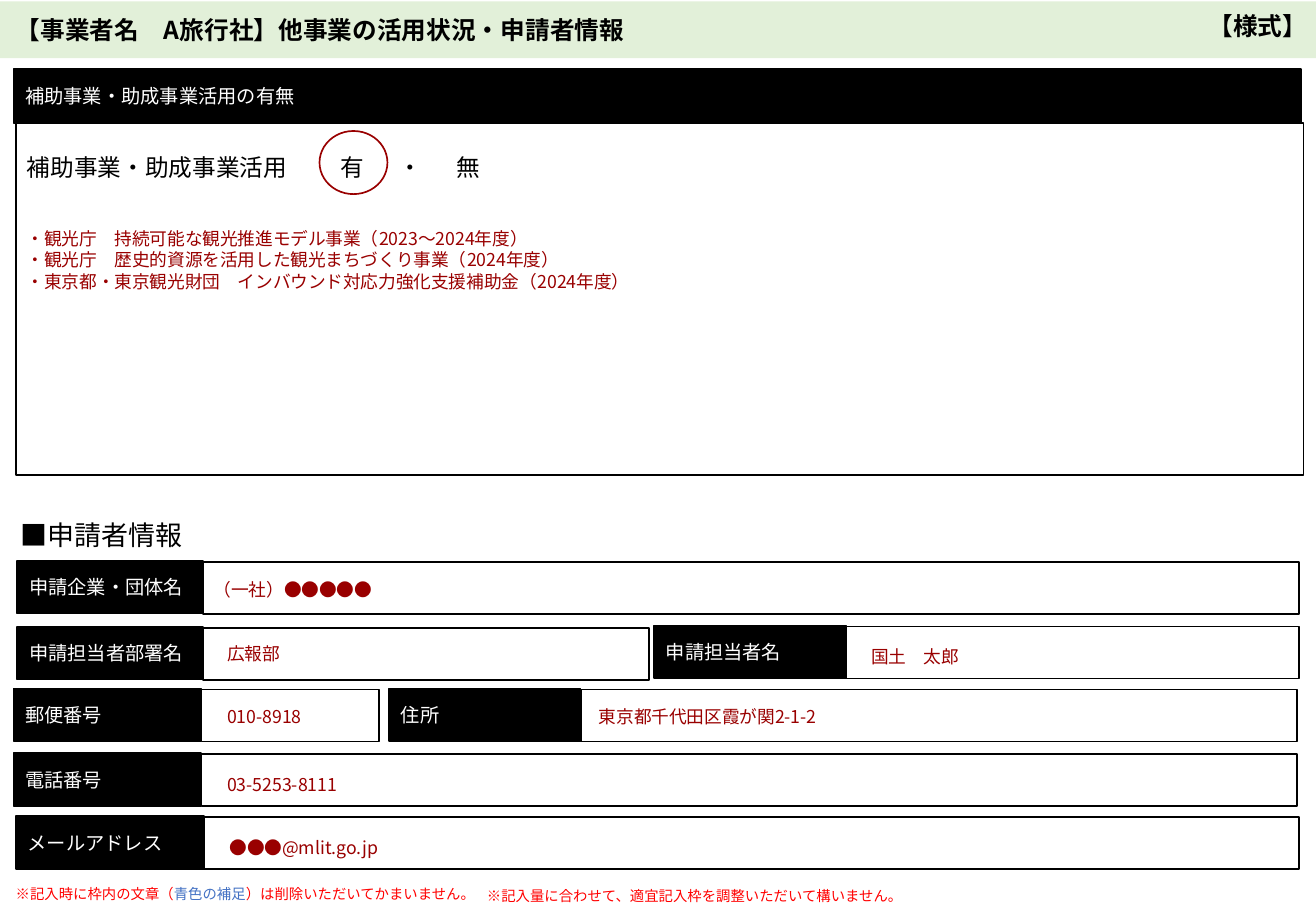
from lxml.etree import SubElement
from pptx import Presentation
from pptx.dml.color import RGBColor
from pptx.enum.lang import MSO_LANGUAGE_ID
from pptx.enum.shapes import MSO_SHAPE
from pptx.enum.text import MSO_ANCHOR, PP_ALIGN
from pptx.oxml.ns import qn
from pptx.util import Cm, Pt

FONT = "Noto Sans CJK JP"
COLORS = {
    "band": "E2F0D9", "black": "000000", "white": "FFFFFF",
    "answer": "990000", "warning": "FF0000", "example": "4472C4",
}

TITLE = "【事業者名　A旅行社】他事業の活用状況・申請者情報"
FORM_MARK = "【様式】"
USAGE_HEADING = "補助事業・助成事業活用の有無"
USAGE_CHOICES = ["補助事業・助成事業活用", "有", "・", "無"]
CHOICE_STOPS = [6.55, 7.77, 8.99]
SUBSIDIES = [
    "・観光庁　持続可能な観光推進モデル事業（2023～2024年度）",
    "・観光庁　歴史的資源を活用した観光まちづくり事業（2024年度）",
    "・東京都・東京観光財団　インバウンド対応力強化支援補助金（2024年度）",
]
APPLICANT_HEADING = "■申請者情報"
# label, left, top, label width, right edge, answer, answer left, answer top
FIELDS = [
    ("申請企業・団体名", 0.36, 11.73, 3.89, 27.15, "（一社）●●●●●", 4.27, 12.01),
    ("申請担当者部署名", 0.36, 13.11, 3.89, 13.57, "広報部", 4.55, 13.34),
    ("申請担当者名", 13.67, 13.08, 4.02, 27.15, "国土　太郎", 18.01, 13.41),
    ("郵便番号", 0.28, 14.4, 3.93, 7.93, "010-8918", 4.55, 14.66),
    ("住所", 8.13, 14.4, 4.01, 27.11, "東京都千代田区霞が関2-1-2", 12.32, 14.66),
    ("電話番号", 0.28, 15.75, 3.93, 27.11, "03-5253-8111", 4.55, 16.08),
    ("メールアドレス", 0.33, 17.07, 3.93, 27.15, "●●●@mlit.go.jp", 4.6, 17.4),
]
NOTES = [
    (0.08, 18.39, [("※記入時に枠内の文章（", "warning"), ("青色の補足", "example"),
                   ("）は削除いただいてかまいません。", "warning")]),
    (9.93, 18.42, [("※記入量に合わせて、適宜記入枠を調整いただいて構いません。", "warning")]),
]


def rgb(name):
    return RGBColor.from_string(COLORS[name])


def style(paragraph, size, color, bold=False):
    font = paragraph.font
    font.name, font.size, font.bold = FONT, Pt(size), bold
    font.language_id = MSO_LANGUAGE_ID.JAPANESE
    font.color.rgb = rgb(color)
    defaults = paragraph._p.pPr.find(qn("a:defRPr"))
    SubElement(defaults, qn("a:ea"), typeface=FONT)


def add_box(box, fill=None, line="black", kind=MSO_SHAPE.RECTANGLE):
    shape = slide.shapes.add_shape(kind, *map(Cm, box))
    shape.shadow.inherit = False
    if fill:
        shape.fill.solid()
        shape.fill.fore_color.rgb = rgb(fill)
    else:
        shape.fill.background()
    if line:
        shape.line.color.rgb = rgb(line)
        shape.line.width = Pt(1)
    else:
        shape.line.fill.background()
    return shape


def add_label(box, text):
    frame = add_box(box, "black").text_frame
    frame.vertical_anchor = MSO_ANCHOR.MIDDLE
    frame.text = text
    frame.paragraphs[0].alignment = PP_ALIGN.LEFT
    style(frame.paragraphs[0], 11.4, "white")


def add_text(box, lines, size, color="black", bold=False, inset=(0.25, 0.13)):
    frame = slide.shapes.add_textbox(*map(Cm, box)).text_frame
    frame.word_wrap = True
    frame.margin_left = frame.margin_right = Cm(inset[0])
    frame.margin_top = frame.margin_bottom = Cm(inset[1])
    frame.text = "\n".join(lines)
    for paragraph in frame.paragraphs:
        style(paragraph, size, color, bold)
    return frame


def add_answer(box, lines, size=10.5, color="answer"):
    return add_text(box, lines, size, color, inset=(0.2, 0.1))


presentation = Presentation()
presentation.slide_width, presentation.slide_height = Cm(27.51), Cm(19.05)
slide = presentation.slides.add_slide(presentation.slide_layouts[6])

add_box((0, 0.03, 27.51, 1.19), "band", None)
add_text((0.08, 0.18, 19.25, 0.89), [TITLE], 14.6, bold=True)
mark = add_text((24.51, 0.1, 3.07, 0.89), [FORM_MARK], 14.6, bold=True)
mark.paragraphs[0].alignment = PP_ALIGN.RIGHT

add_label((0.28, 1.45, 26.92, 1.12), USAGE_HEADING)
add_box((0.33, 2.57, 26.92, 7.36), "white")
choices = add_answer((0.36, 3.1, 25.93, 0.81), ["\t".join(USAGE_CHOICES)], 14, "black")
choice_props = choices.paragraphs[0]._p.pPr
tab_list = SubElement(choice_props, qn("a:tabLst"))
for stop in CHOICE_STOPS:
    SubElement(tab_list, qn("a:tab"), pos=str(Cm(stop)), algn="l")
choice_props.insert(0, tab_list)
add_box((6.68, 2.74, 1.42, 1.32), line="answer", kind=MSO_SHAPE.OVAL)
add_answer((0.36, 4.67, 25.93, 1.55), SUBSIDIES)

heading = add_text((0.18, 10.62, 4.5, 1.12), [APPLICANT_HEADING], 16)
heading.vertical_anchor = MSO_ANCHOR.MIDDLE
for label, left, top, label_width, right, answer, answer_left, answer_top in FIELDS:
    entry_left = left + label_width
    add_box((entry_left, top + 0.02, right - entry_left, 1.09), "white")
    add_label((left, top, label_width, 1.1), label)
    add_answer((answer_left, answer_top, 6.5, 0.66), [answer])

for left, top, parts in NOTES:
    note = add_text((left, top, 11.23, 0.61), [""], 8.5, "warning").paragraphs[0]
    for text, color in parts:
        run = note.add_run()
        run.text = text
        run.font.color.rgb = rgb(color)

presentation.save("out.pptx")
